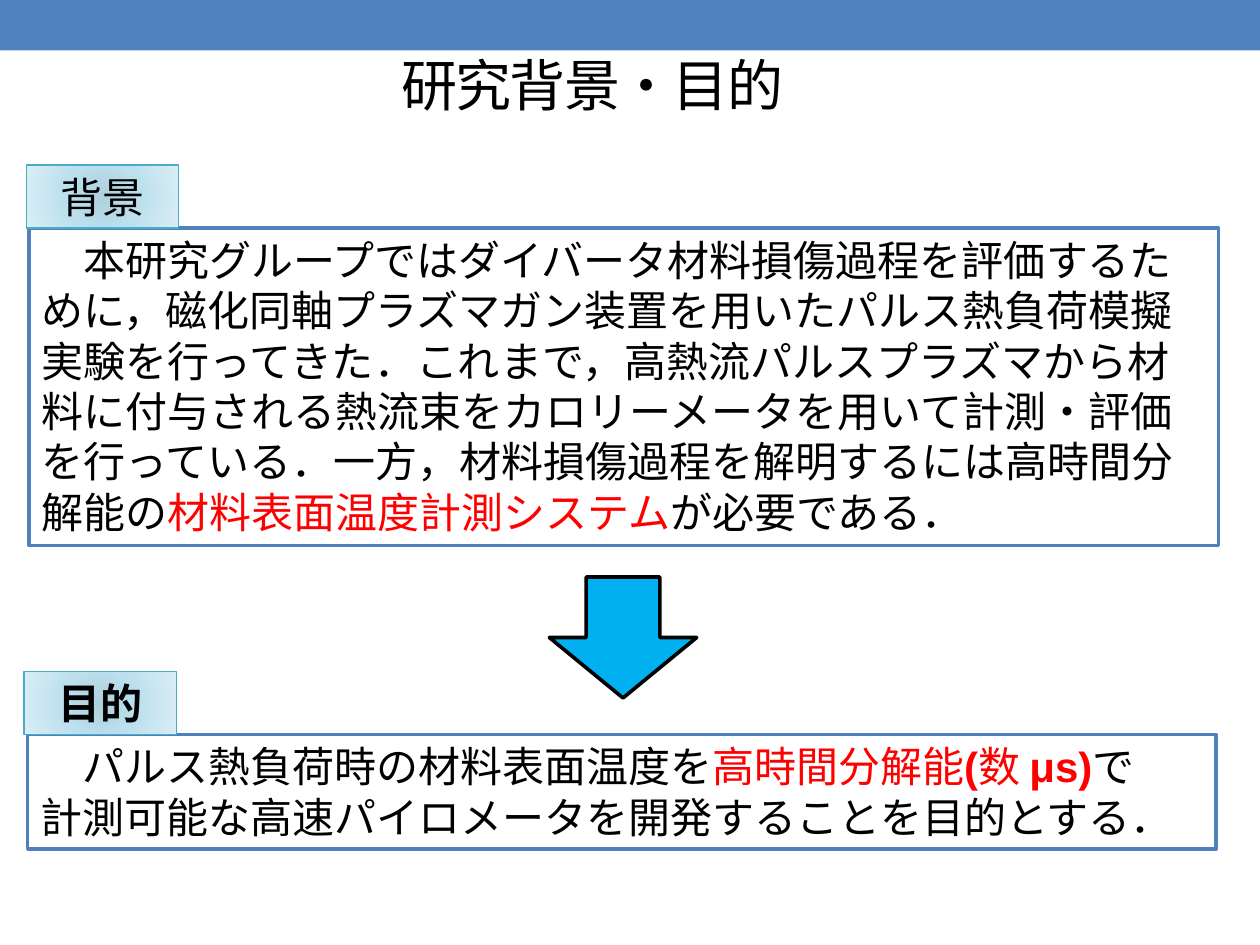
"""Build the research background and purpose slide."""
from lxml import etree
from pptx import Presentation, util as u
from pptx.dml.color import RGBColor
from pptx.enum import shapes, text
from pptx.oxml import ns

PX = 9144
COLORS = {"blue": "4F81BD", "teal": "4BACC6", "sky": "00B0F0",
          "white": "FFFFFF", "black": "000000", "red": "FF0000"}
LABEL_STOPS = [(0, "AFD0DD"), (45, "BCE0EE"), (100, "DAEEF6")]
BACKGROUND = [[
    ("\u3000本研究グループではダイバータ材料損傷過程を評価するために，磁化同軸プラズマガン装置を用いた"
     "パルス熱負荷模擬実験を行ってきた．これまで，高熱流パルスプラズマから材料に付与される熱流束を"
     "カロリーメータを用いて計測・評価を行っている．一方，材料損傷過程を解明するには高時間分解能の",
     "black", False),
    ("材料表面温度計測システム", "red", False),
    ("が必要である．", "black", False),
]]
PURPOSE = [
    [("\u3000パルス熱負荷時の材料表面温度を", "black", False),
     ("高時間分解能", "red", False), ("(", "red", True),
     ("数 ", "red", False), ("μs)", "red", True), ("で", "black", False)],
    [("計測可能な高速パイロメータを開発することを目的とする．", "black", False)],
]


class Deck:
    """Hold the style and the current slide."""

    def __init__(self, font, size):
        self.font, self.size = font, size
        self.prs = Presentation()
        self.prs.slide_width, self.prs.slide_height = 1000 * PX, 750 * PX
        self.slide = self.prs.slides.add_slide(self.prs.slide_layouts[5])

    def color(self, name):
        """Return a named colour."""
        return RGBColor.from_string(COLORS[name])

    def add_text(self, tf, paragraphs, align, size=None):
        """Fill a text frame with paragraphs of (text, colour, bold) runs."""
        tf.word_wrap = True
        for i, runs in enumerate(paragraphs):
            p = tf.add_paragraph() if i else tf.paragraphs[0]
            p.alignment = align
            p.font.name, p.font.size = self.font, u.Pt(size or self.size)
            for words, color, bold in runs:
                r = p.add_run()
                r.text = words
                r.font.bold = bold
                r.font.color.rgb = self.color(color)

    def title(self, words, box, size):
        """Place and format the title placeholder."""
        s = self.slide.shapes.title
        s.left, s.top, s.width, s.height = (v * PX for v in box)
        tf = s.text_frame
        tf.vertical_anchor = text.MSO_ANCHOR.MIDDLE
        self.add_text(tf, [[(words, "black", False)]], text.PP_ALIGN.CENTER, size)
        tf.paragraphs[0].runs[0]._r.get_or_add_rPr().set("spc", "-100")

    def shape(self, kind, box, fill, line=None, weight=2.08, parent=None):
        """Add a filled preset shape."""
        s = (parent or self.slide).shapes.add_shape(kind, *(v * PX for v in box))
        s.shadow.inherit = False
        s.fill.solid()
        s.fill.fore_color.rgb = self.color(fill)
        if line:
            s.line.color.rgb = self.color(line)
            s.line.width = u.Pt(weight)
        else:
            s.line.fill.background()
        return s

    def gradient(self, s, stops):
        """Replace a solid fill with a circular gradient."""
        solid = s._element.spPr.find(ns.qn("a:solidFill"))
        grad = etree.Element(ns.qn("a:gradFill"), {"rotWithShape": "1"})
        stop_list = etree.SubElement(grad, ns.qn("a:gsLst"))
        for position, value in stops:
            stop = etree.SubElement(stop_list, ns.qn("a:gs"), {"pos": str(position * 1000)})
            etree.SubElement(stop, ns.qn("a:srgbClr"), {"val": value})
        circle = etree.SubElement(grad, ns.qn("a:path"), {"path": "circle"})
        etree.SubElement(circle, ns.qn("a:fillToRect"),
                         {side: "100000" for side in "ltrb"})
        s._element.spPr.replace(solid, grad)

    def section(self, label, label_box, bold, paragraphs, box):
        """Group a bordered text box with its label tab."""
        group = self.slide.shapes.add_group_shape()
        rect = shapes.MSO_SHAPE.RECTANGLE
        body = self.shape(rect, box, "white", "blue", parent=group)
        body.text_frame.vertical_anchor = text.MSO_ANCHOR.TOP
        self.add_text(body.text_frame, paragraphs, text.PP_ALIGN.LEFT)
        tab = self.shape(rect, label_box, "white", "teal", 0.75, group)
        self.gradient(tab, LABEL_STOPS)
        tab.text_frame.vertical_anchor = text.MSO_ANCHOR.TOP
        self.add_text(tab.text_frame, [[(label, "black", bold)]], text.PP_ALIGN.CENTER)


def main():
    """Build and save the slide."""
    deck = Deck("Arial", 24)
    deck.shape(shapes.MSO_SHAPE.RECTANGLE, (0, 0, 1000, 40), "blue")
    deck.title("研究背景・目的", (20, 13, 900, 108), 32)
    deck.section("背景", (21, 131, 121, 50), False, BACKGROUND, (23, 181, 944, 252))
    deck.section("目的", (19, 533, 121, 50), True, PURPOSE, (22, 583, 943, 91))
    deck.shape(shapes.MSO_SHAPE.DOWN_ARROW, (436, 458, 117, 96), "sky", "black")
    deck.prs.save("out.pptx")


if __name__ == "__main__":
    main()
